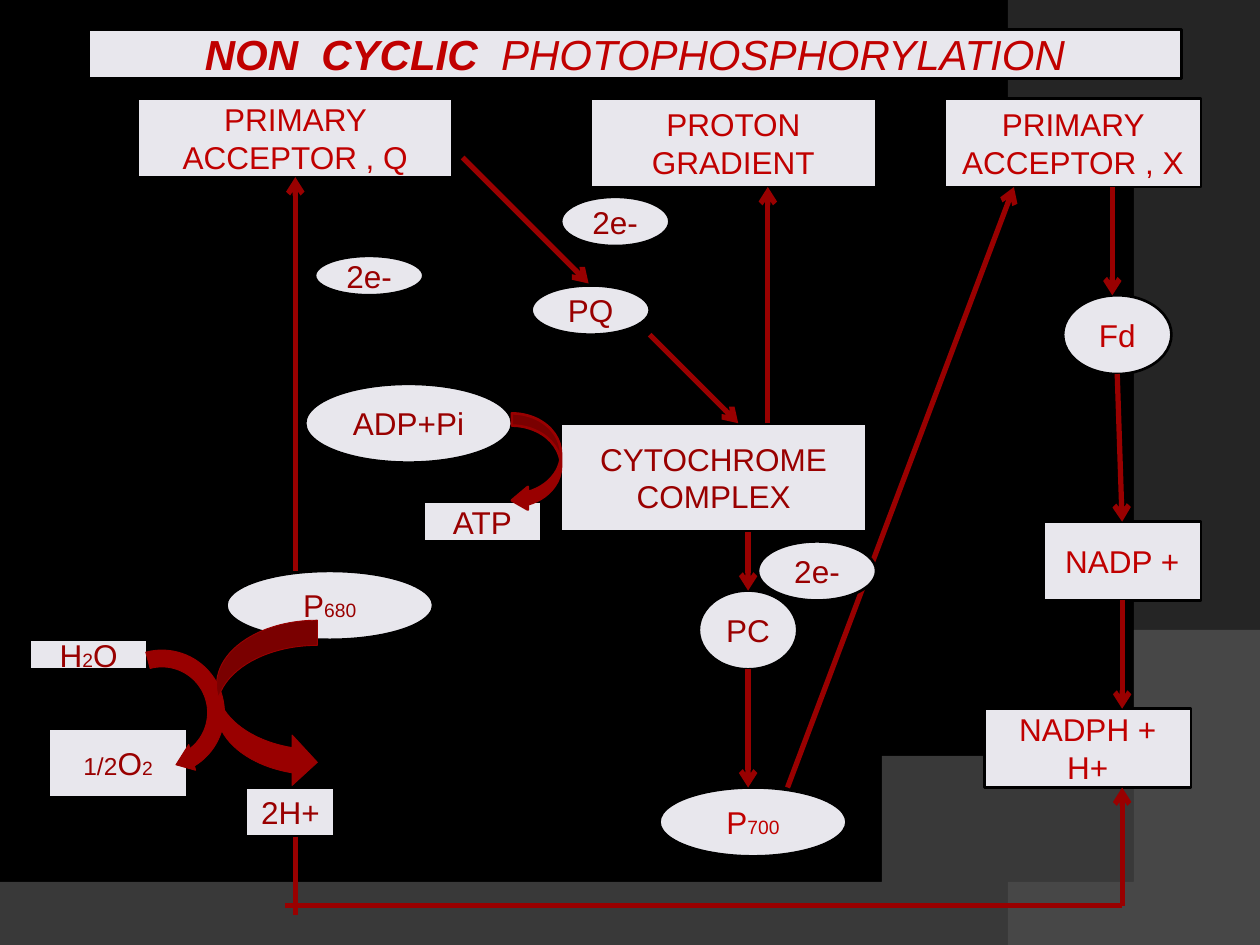
"""Build the non-cyclic photophosphorylation slide on a 128 by 96 grid."""
from lxml.etree import SubElement
from pptx import Presentation
from pptx.dml.color import RGBColor
from pptx.enum.shapes import MSO_CONNECTOR, MSO_SHAPE as Preset
from pptx.enum.text import MSO_ANCHOR, PP_ALIGN
from pptx.oxml.ns import qn
from pptx.util import Inches, Pt

WIDTH, HEIGHT, COLUMNS = 10, 7.5, 128
RED, DARK, PALE, BLACK = "C00000", "990000", "E8E7ED", "000000"
RECT, OVAL = Preset.RECTANGLE, Preset.OVAL

SWEEPS = [
    ("7F7F7F", 45, [(0, 7.5), (10, 7.5)],
     [(10, 5.2), (5.59, 7.29), (3.91, 7.19), (0, 7.05)]),
    ("5E5E5E", 40, [(10, 0.02), (10, 7.5)],
     [(8.21, 7.5), (9.35, 6.19), (10.18, 3), (8, 0)]),
]
TITLE = (9, 3, 111, 5)
TITLE_RUNS = [("NON  CYCLIC  ", True), ("PHOTOPHOSPHORYLATION", False)]

STAGES = {
    "acceptor Q": (RECT, (14, 10, 32, 8), RED, [("PRIMARY ACCEPTOR , Q", 18)]),
    "gradient": (RECT, (60, 10, 29, 9), RED, [("PROTON GRADIENT", 18)]),
    "acceptor X": (RECT, (96, 10, 26, 9), RED, [("PRIMARY ACCEPTOR , X", 18)]),
    "PQ": (OVAL, (54, 29, 12, 5), DARK, [("PQ", 18)]),
    "cytochrome": (RECT, (57, 43, 31, 11), DARK, [("CYTOCHROME COMPLEX", 18)]),
    "PC": (OVAL, (71, 60, 10, 8), DARK, [("PC", 18)]),
    "P700": (OVAL, (67, 80, 19, 7), RED, [("P", 18), ("700", 11)]),
    "P680": (OVAL, (23, 58, 21, 7), DARK, [("P", 18), ("680", 11)]),
    "water": (RECT, (3, 65, 12, 3), DARK, [("H", 18), ("2", 11), ("O", 18)]),
    "oxygen": (RECT, (5, 74, 14, 7), DARK, [("1/2", 14), ("O", 18), ("2", 11)]),
    "protons": (RECT, (25, 80, 9, 5), DARK, [("2H+", 18)]),
    "Fd": (OVAL, (108, 30, 11, 8), RED, [("Fd", 18)]),
    "NADP": (RECT, (106, 53, 16, 8), RED, [("NADP +", 18)]),
    "NADPH": (RECT, (100, 72, 21, 8), RED, [("NADPH + H+", 18)]),
    "ADP": (OVAL, (31, 39, 21, 8), DARK, [("ADP+Pi", 18)]),
    "ATP": (RECT, (43, 51, 12, 4), DARK, [("ATP", 18)]),
}
ELECTRONS = [(32, 26, 11, 4), (57, 20, 11, 5), (77, 55, 12, 6)]

TOP, BOTTOM = 0, 2
FLOWS = [
    ((47, 16), (59.8, 28.8), True, None, None),
    ((66, 34), (75, 43), True, None, None),
    ((76, 54), (76, 60), True, None, None),
    ((76, 68), (76, 80), True, None, None),
    ((30, 58), (30, 18), True, None, ("acceptor Q", BOTTOM)),
    ((78, 43), (78, 19), True, None, None),
    ((80, 80), (103, 19), True, None, None),
    ((113, 19), (113, 30), True, None, None),
    ((113.5, 38), (114, 53), True, None, ("NADP", TOP)),
    ((114, 61), (114, 72), True, ("NADP", BOTTOM), None),
    ((30, 85), (30, 93), False, None, None),
    ((29, 92), (114, 92), False, None, None),
    ((114, 92), (114, 80), True, None, None),
]
BENDS = [
    (Preset.CIRCULAR_ARROW, (9.6, 65.54, 13.7, 13.7), 75, 0.5,
     [0.125, 11.423, 204.577, 108, 0.099]),
    (Preset.CURVED_RIGHT_ARROW, (22, 63, 10.24, 17), 0, 0.5, []),
    (Preset.CURVED_LEFT_ARROW, (52, 42, 5, 10), 0, 1.5, [0.25, 0.461, 0.326]),
]


def colour(code):
    """Turn a hex string into a colour."""
    return RGBColor.from_string(code)


def cells(*counts):
    """Turn counts of grid cells into lengths."""
    return [Inches(count * WIDTH / COLUMNS) for count in counts]


def add_solid(slide, preset, place, fill, edge, weight):
    """Add a flat preset shape."""
    solid = slide.shapes.add_shape(preset, *cells(*place))
    solid.shadow.inherit = False
    solid.fill.solid()
    solid.fill.fore_color.rgb = colour(fill)
    solid.line.color.rgb = colour(edge)
    solid.line.width = Pt(weight)
    return solid


def add_label(slide, preset, place, ink):
    """Add a pale labelled shape and return it with its paragraph."""
    label = add_solid(slide, preset, place, PALE, BLACK, 1.5)
    label.text_frame.word_wrap = True
    label.text_frame.vertical_anchor = MSO_ANCHOR.MIDDLE
    line = label.text_frame.paragraphs[0]
    line.alignment = PP_ALIGN.CENTER
    line.font.name = "Arial"
    line.font.color.rgb = colour(ink)
    return label, line


def add_stage(slide, preset, place, ink, pieces):
    """Add a stage whose label may mix text sizes."""
    stage, line = add_label(slide, preset, place, ink)
    line.font.size = Pt(18)
    for wording, size in pieces:
        run = line.add_run()
        run.text = wording
        if size != 18:
            run.font.size = Pt(size)
    return stage


def add_title(slide):
    """Add the title bar."""
    _, line = add_label(slide, RECT, TITLE, RED)
    line.font.size = Pt(24)
    line.font.italic = True
    for wording, bold in TITLE_RUNS:
        run = line.add_run()
        run.text = wording
        run.font.bold = bold


def add_sweep(slide, shade, opacity, corners, curve, steps=40):
    """Add a translucent background area bounded by a cubic curve."""
    arc = []
    for step in range(steps + 1):
        t = step / steps
        weights = ((1 - t) ** 3, 3 * t * (1 - t) ** 2, 3 * t * t * (1 - t), t ** 3)
        arc.append(tuple(sum(w * point[axis] for w, point in zip(weights, curve))
                         for axis in (0, 1)))
    outline = corners + arc
    builder = slide.shapes.build_freeform(*outline[0], scale=Inches(1))
    builder.add_line_segments(outline[1:], close=True)
    sweep = builder.convert_to_shape()
    sweep.shadow.inherit = False
    sweep.line.fill.background()
    sweep.fill.solid()
    sweep.fill.fore_color.rgb = colour(shade)
    tint = sweep.fill._xPr.find(qn("a:solidFill"))[0]
    SubElement(tint, qn("a:alpha"), val=str(opacity * 1000))


def add_flow(slide, stages, start, end, headed, source, target):
    """Add a flow line, joined to stages where it meets a side's middle."""
    flow = slide.shapes.add_connector(MSO_CONNECTOR.STRAIGHT, *cells(*start, *end))
    if source:
        flow.begin_connect(stages[source[0]], source[1])
    if target:
        flow.end_connect(stages[target[0]], target[1])
    flow.line.color.rgb = colour(DARK)
    flow.line.width = Pt(3)
    if headed:
        SubElement(flow.line._get_or_add_ln(), qn("a:tailEnd"), type="arrow")
    SubElement(flow._element.spPr, qn("a:effectLst"))


def main():
    """Assemble and save the slide."""
    deck = Presentation()
    deck.slide_width, deck.slide_height = Inches(WIDTH), Inches(HEIGHT)
    slide = deck.slides.add_slide(deck.slide_layouts[6])
    slide.background.fill.solid()
    slide.background.fill.fore_color.rgb = colour(BLACK)
    for sweep in SWEEPS:
        add_sweep(slide, *sweep)
    add_title(slide)
    stages = {name: add_stage(slide, *stage) for name, stage in STAGES.items()}
    for flow in FLOWS:
        add_flow(slide, stages, *flow)
    for preset, place, turn, weight, adjustments in BENDS:
        bend = add_solid(slide, preset, place, DARK, DARK, weight)
        bend.rotation = turn
        for index, amount in enumerate(adjustments):
            bend.adjustments[index] = amount
    for place in ELECTRONS:
        add_stage(slide, OVAL, place, DARK, [("2e-", 18)])
    deck.save("out.pptx")


if __name__ == "__main__":
    main()
